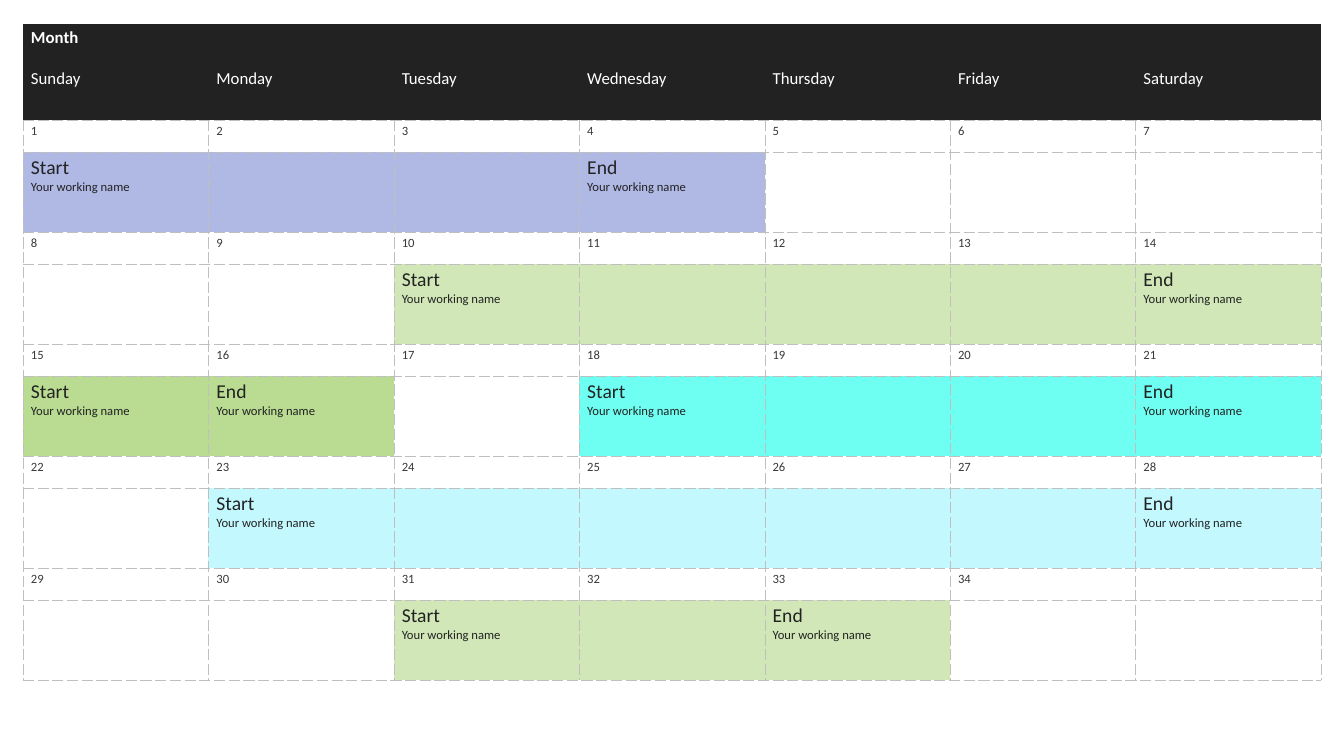
from lxml.etree import SubElement as Sub
from pptx import Presentation
from pptx.dml.color import RGBColor
from pptx.oxml.ns import qn
from pptx.util import Pt

SCALE = 914400 / 100.8
DAYS = "Sunday Monday Tuesday Wednesday Thursday Friday Saturday".split()
WEEKS, LAST = 5, 34
DARK, GREY, LINE, WHITE = "222222", "383838", "BFBFBF", "FFFFFF"
EVENTS = [
    (0, 0, 3, "B0B8E4"),
    (1, 2, 6, "D1E7B7"),
    (2, 0, 1, "B9DB92"),
    (2, 3, 6, "6FFFF2"),
    (3, 1, 6, "C3F8FF"),
    (4, 2, 4, "D1E7B7"),
]


def px(n):
    """Turn pixels into EMU."""
    return round(n * SCALE)


def tint(code):
    """Turn a hex string into a colour."""
    return RGBColor.from_string(code)


def edge(cell, sides):
    """Dash the named sides of a cell and clear the others."""
    props = cell._tc.get_or_add_tcPr()
    for side in "LRTB":
        line = Sub(props, qn("a:ln" + side), w=str(Pt(0.25)))
        if side in sides:
            fill = Sub(line, qn("a:solidFill"))
            Sub(fill, qn("a:srgbClr"), val=LINE)
            Sub(line, qn("a:prstDash"), val="sysDash")
        else:
            Sub(line, qn("a:noFill"))


def style(cell, sides="LRTB", fill=None):
    """Set the margins, borders and fill of a cell."""
    cell.margin_left = cell.margin_right = px(8)
    cell.margin_top = cell.margin_bottom = px(4)
    edge(cell, sides)
    if fill:
        cell.fill.solid()
        cell.fill.fore_color.rgb = tint(fill)
    else:
        cell.fill.background()


def write(cell, lines):
    """Write lines of text, size, colour and weight into a cell."""
    frame = cell.text_frame
    for i, (text, size, color, bold) in enumerate(lines):
        para = frame.add_paragraph() if i else frame.paragraphs[0]
        para.text = text
        font = para.font
        font.name, font.size, font.bold = "Calibri", Pt(size), bold
        font.color.rgb = tint(color)
    if not lines:
        Sub(frame.paragraphs[0]._p, qn("a:endParaRPr"), sz="900")


def header(table):
    """Fill the top row with the month and the day names."""
    for col, day in enumerate(DAYS):
        cell = table.cell(0, col)
        style(cell, "B", DARK)
        name = (day, 12, WHITE, False)
        if col:
            write(cell, [name])
            cell.margin_top = px(45)
        else:
            write(cell, [("Month", 12, WHITE, True), name])
            cell.text_frame.paragraphs[1].space_before = Pt(14.65)


def week(table, num):
    """Fill the date row and the event row of one week."""
    row = 1 + 2 * num
    for col in range(len(DAYS)):
        date = num * len(DAYS) + col + 1
        cell = table.cell(row, col)
        style(cell)
        write(cell, [(str(date), 9, GREY, False)] if date <= LAST else [])
        fill, lines = None, []
        for which, first, last, color in EVENTS:
            if which == num and first <= col <= last:
                fill = color
                if col in (first, last):
                    label = "Start" if col == first else "End"
                    lines = [(label, 14, DARK, False),
                             ("Your working name", 9, DARK, False)]
        cell = table.cell(row + 1, col)
        style(cell, fill=fill)
        write(cell, lines)


def month(slide, left, top, width, height):
    """Place the month table in the given box."""
    rows = 1 + 2 * WEEKS
    frame = slide.shapes.add_table(
        rows, len(DAYS), px(left), px(top), px(width), px(height))
    table = frame.table
    table.first_row = table.horz_banding = False
    head, date = 96, 32
    event = (height - head) // WEEKS - date
    for row, size in zip(table.rows, [head] + [date, event] * WEEKS):
        row.height = px(size)
    header(table)
    for num in range(WEEKS):
        week(table, num)


def main():
    """Build the slide and save it."""
    deck = Presentation()
    deck.slide_width, deck.slide_height = px(1344), px(756)
    slide = deck.slides.add_slide(deck.slide_layouts[6])
    month(slide, 23, 24, 1298, 656)
    deck.save("out.pptx")


if __name__ == "__main__":
    main()
